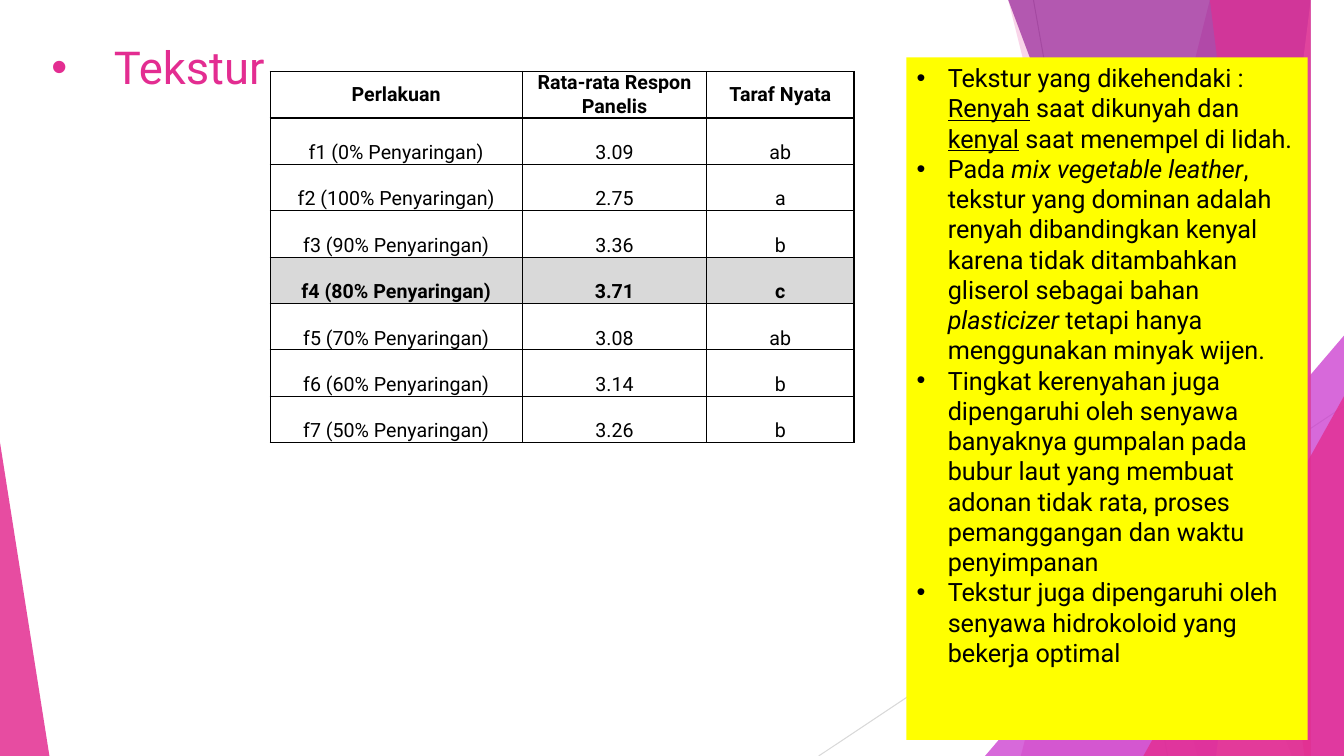
from dataclasses import dataclass

from pptx import Presentation, util as u
from pptx.dml.color import RGBColor
from pptx.enum import shapes, text
from pptx.oxml import ns, xmlchemy


@dataclass(frozen=True)
class Theme:
    """Colours, font and type sizes of the deck."""
    font: str = "Roboto"
    pink: str = "E32D91"
    light_pink: str = "EE81BD"
    violet: str = "C830CC"
    purple: str = "962499"
    black: str = "000000"
    shade: str = "D9D9D9"
    line: str = "BFBFBF"
    note: str = "FFFF00"
    title_size: float = 32.4
    note_size: float = 18
    table_size: float = 14


THEME = Theme()
WIDTH, HEIGHT = 13.33, 7.5

ROWS = [
    ("Perlakuan", "Rata-rata Respon Panelis", "Taraf Nyata"),
    ("f1 (0% Penyaringan)", "3.09", "ab"),
    ("f2 (100% Penyaringan)", "2.75", "a"),
    ("f3 (90% Penyaringan)", "3.36", "b"),
    ("f4 (80% Penyaringan)", "3.71", "c"),
    ("f5 (70% Penyaringan)", "3.08", "ab"),
    ("f6 (60% Penyaringan)", "3.14", "b"),
    ("f7 (50% Penyaringan)", "3.26", "b"),
]
BEST_ROW = 4

NOTES = [
    [("Tekstur yang dikehendaki : ", ""), ("Renyah", "underline"),
     (" saat dikunyah dan ", ""), ("kenyal", "underline"),
     (" saat menempel di lidah.", "")],
    [("Pada ", ""), ("mix vegetable leather", "italic"),
     (", tekstur yang dominan adalah renyah dibandingkan kenyal karena tidak "
      "ditambahkan gliserol sebagai bahan ", ""),
     ("plasticizer ", "italic"), ("tetapi hanya menggunakan minyak wijen.", "")],
    [("Tingkat kerenyahan juga dipengaruhi oleh senyawa banyaknya gumpalan pada "
      "bubur laut yang membuat adonan tidak rata, proses pemanggangan dan waktu "
      "penyimpanan", "")],
    [("Tekstur juga dipengaruhi oleh senyawa hidrokoloid yang bekerja optimal", "")],
]


def rgb(colour):
    """Turn a hex string into a colour."""
    return RGBColor.from_string(colour)


def add_node(parent, tag, **attributes):
    """Append a DrawingML element to a parent and return it."""
    node = xmlchemy.OxmlElement(tag)
    for name, value in attributes.items():
        node.set(name, str(value))
    parent.append(node)
    return node


def paint(shape, colour, opacity):
    """Give a shape a translucent fill, no outline and no shadow."""
    shape.shadow.inherit = False
    shape.line.fill.background()
    shape.fill.solid()
    shape.fill.fore_color.rgb = rgb(colour)
    solid = shape._element.spPr.find(".//" + ns.qn("a:srgbClr"))
    add_node(solid, "a:alpha", val=opacity * 1000)


def add_band(page, top_left, bottom_left, colour, opacity):
    """Draw a slanted band that reaches the right edge of the slide."""
    builder = page.shapes.build_freeform(top_left, 0, scale=u.Inches(1))
    builder.add_line_segments(
        [(WIDTH, 0), (WIDTH, HEIGHT), (bottom_left, HEIGHT)], close=True)
    paint(builder.convert_to_shape(), colour, opacity)


def add_corner(page, left, top, width, apex, colour, opacity):
    """Draw a right triangle that stands on the bottom edge of the slide."""
    triangle = page.shapes.add_shape(
        shapes.MSO_SHAPE.ISOSCELES_TRIANGLE,
        *map(u.Inches, (left, top, width, HEIGHT - top)))
    triangle.adjustments[0] = apex
    paint(triangle, colour, opacity)


def add_line(page, ends, colour):
    """Draw a thin background line."""
    line = page.shapes.add_connector(
        shapes.MSO_CONNECTOR.STRAIGHT, *map(u.Inches, ends))
    line.line.color.rgb = rgb(colour)
    line.line.width = u.Pt(0.75)
    add_node(line._element.spPr, "a:effectLst")


def add_backdrop(page):
    """Draw the lines and facets behind the content."""
    add_line(page, (10.25, 0, 11.58, HEIGHT), THEME.line)
    add_line(page, (WIDTH, 4.03, 8.12, HEIGHT), THEME.shade)
    add_band(page, 12.28, 10.04, THEME.pink, 30)
    add_band(page, 10.5, 11.83, THEME.pink, 20)
    add_corner(page, 9.77, 3.33, 3.56, 1, THEME.violet, 72)
    add_band(page, 10.21, 12.91, THEME.purple, 70)
    add_band(page, 13.03, 11.92, THEME.light_pink, 70)
    add_band(page, 11.96, 13.18, THEME.pink, 65)
    add_corner(page, 11.34, 3.93, 1.99, 1, THEME.pink, 80)
    add_corner(page, 0, 4.39, 0.49, 0, THEME.pink, 85)


def place(page, holder, box):
    """Move a placeholder to a box, in front of what is already drawn."""
    holder.left, holder.top, holder.width, holder.height = map(u.Inches, box)
    page.shapes._spTree.append(holder._element)
    frame = holder.text_frame
    frame.word_wrap = True
    frame.auto_size = text.MSO_AUTO_SIZE.NONE
    frame.vertical_anchor = text.MSO_ANCHOR.TOP
    return frame


def set_font(para, size, colour, bold=False):
    """Set the font of a whole paragraph."""
    para.font.name = THEME.font
    para.font.size = u.Pt(size)
    para.font.color.rgb = rgb(colour)
    para.font.bold = bold


def set_bullet(para, indent):
    """Give a paragraph a round bullet with a hanging indent."""
    para.alignment = text.PP_ALIGN.LEFT
    properties = para._p.get_or_add_pPr()
    properties.set("marL", str(u.Inches(indent)))
    properties.set("indent", str(-u.Inches(indent)))
    add_node(properties, "a:buFont", typeface="Arial")
    add_node(properties, "a:buChar", char="•")
    para.space_before = u.Pt(0)


def add_title(page, box):
    """Write the bulleted title."""
    frame = place(page, page.shapes.title, box)
    frame.margin_top = u.Inches(0.09)
    para = frame.paragraphs[0]
    para.text = "Tekstur"
    set_bullet(para, 0.62)
    set_font(para, THEME.title_size, THEME.pink)


def fill_cell(cell, words, row):
    """Write and style one table cell."""
    cell.margin_left = cell.margin_right = u.Inches(0.07)
    cell.margin_top = cell.margin_bottom = 0
    cell.vertical_anchor = text.MSO_ANCHOR.MIDDLE
    para = cell.text_frame.paragraphs[0]
    para.text = words
    para.alignment = text.PP_ALIGN.CENTER
    para.line_spacing = 2.0 if row else 1.0
    set_font(para, THEME.table_size, THEME.black, bold=row in (0, BEST_ROW))
    properties = cell._tc.get_or_add_tcPr()
    for side in ("a:lnL", "a:lnR", "a:lnT", "a:lnB"):
        border = add_node(properties, side, w=u.Pt(1))
        add_node(add_node(border, "a:solidFill"), "a:srgbClr", val=THEME.black)
    if row == BEST_ROW:
        cell.fill.solid()
        cell.fill.fore_color.rgb = rgb(THEME.shade)
    else:
        cell.fill.background()


def add_scores(page, box):
    """Draw the table of panel scores."""
    table = page.shapes.add_table(len(ROWS), 3, *map(u.Inches, box)).table
    for column, width in zip(table.columns, (2.5, 1.83, 1.46)):
        column.width = u.Inches(width)
    for row, values in enumerate(ROWS):
        table.rows[row].height = u.Inches(box[3] / len(ROWS))
        for column, words in enumerate(values):
            fill_cell(table.cell(row, column), words, row)


def add_notes(page, box):
    """Write the list of remarks on its yellow panel."""
    holder = page.placeholders[1]
    frame = place(page, holder, box)
    holder.fill.solid()
    holder.fill.fore_color.rgb = rgb(THEME.note)
    for index, spans in enumerate(NOTES):
        para = frame.add_paragraph() if index else frame.paragraphs[0]
        set_bullet(para, 0.31)
        set_font(para, THEME.note_size, THEME.black)
        for words, style in spans:
            span = para.add_run()
            span.text = words
            if style:
                setattr(span.font, style, True)


def main():
    """Build the slide and save it."""
    deck = Presentation()
    deck.slide_width, deck.slide_height = u.Inches(WIDTH), u.Inches(HEIGHT)
    page = deck.slides.add_slide(deck.slide_layouts[1])
    add_backdrop(page)
    add_title(page, (0.41, 0.3, 9.4, 0.52))
    add_scores(page, (2.68, 0.71, 5.79, 3.68))
    add_notes(page, (8.99, 0.57, 3.98, 6.77))
    deck.save("out.pptx")


if __name__ == "__main__":
    main()
